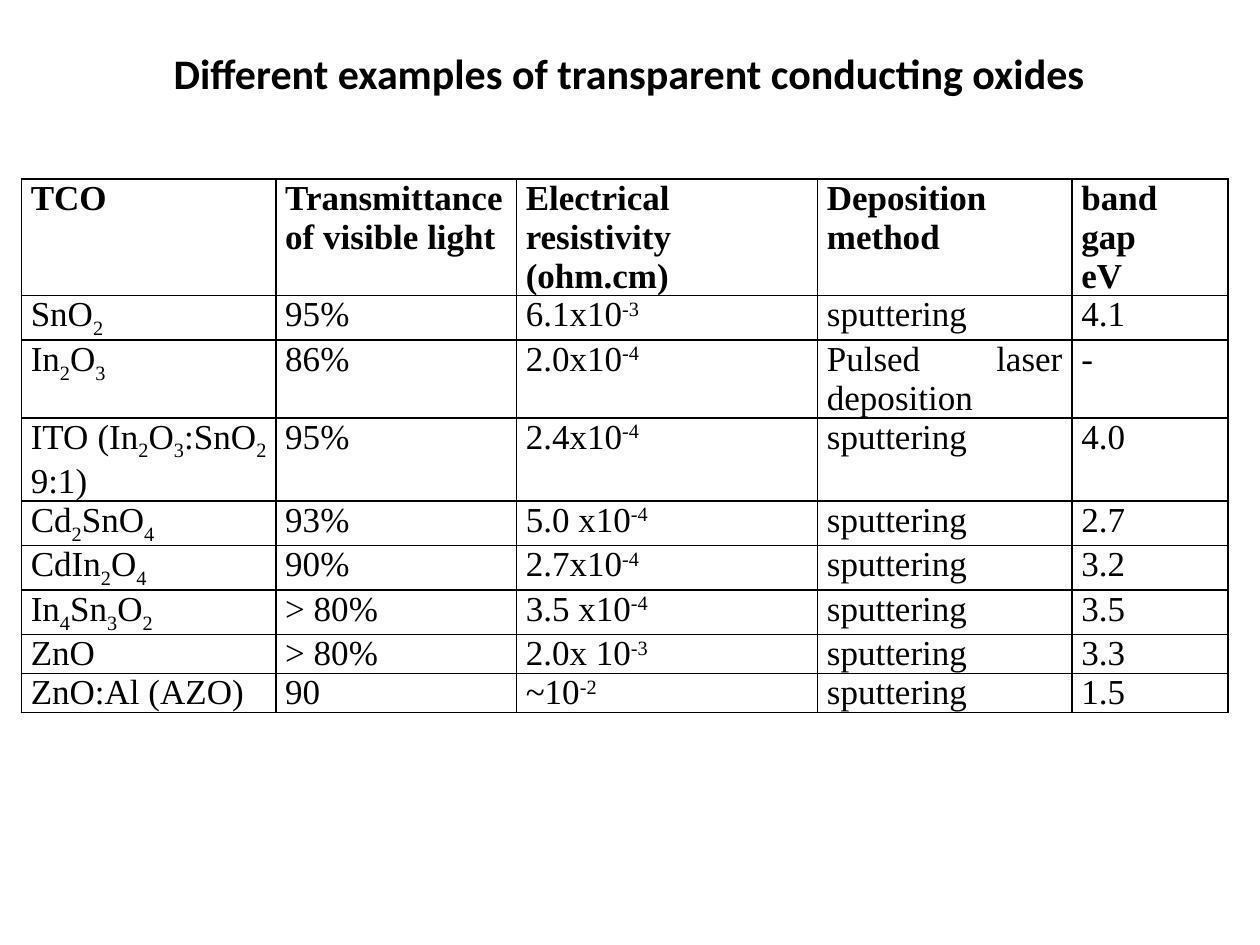
"""Build a slide with a table of transparent conducting oxides."""
from lxml import etree
from pptx import Presentation
from pptx.dml.color import RGBColor
from pptx.enum.text import MSO_AUTO_SIZE, PP_ALIGN
from pptx.oxml.ns import qn
from pptx.util import Cm, Pt

CENTER, JUSTIFY = PP_ALIGN.CENTER, PP_ALIGN.JUSTIFY
FIT_SHAPE = MSO_AUTO_SIZE.SHAPE_TO_FIT_TEXT

TITLE = "Different examples of transparent conducting oxides"
HEADINGS = [
    ["TCO"],
    ["Transmittance", "of visible light"],
    ["Electrical", "resistivity (ohm.cm)"],
    ["Deposition method"],
    ["band gap ", "eV"],
]
# fmt: off
OXIDES = [
    ("SnO|2", "95%", "6.1x10|-3", "sputtering", "4.1"),
    ("In|2|O|3", "86%", "2.0x10|-4", "Pulsed laser deposition", "-"),
    ("ITO (In|2|O|3|:SnO|2 |9:1)", "95%", "2.4x10|-4", "sputtering", "4.0"),
    ("Cd|2|SnO|4", "93%", "5.0 x10|-4", "sputtering", "2.7"),
    ("CdIn|2|O|4", "90%", "2.7x10|-4", "sputtering", "3.2"),
    ("In|4|Sn|3|O|2", "> 80%", "3.5 x10|-4", "sputtering", "3.5"),
    ("ZnO", "> 80%", "2.0x 10|-3", "sputtering", "3.3"),
    ("ZnO:Al (AZO)", "90", "~10|-2", "sputtering", "1.5"),
]
# fmt: on
COLUMN_WIDTHS = [5.13, 4.85, 6.07, 5.13, 3.15]
ROW_HEIGHTS = [1.45, 0.74, 1.22, 1.45] + [0.74] * 5

INK = RGBColor(0, 0, 0)
THEME = {
    "title": {"name": "Calibri", "size": Pt(24), "bold": True},
    "heading": {"name": "Times New Roman", "size": Pt(20), "bold": True},
    "body": {"name": "Times New Roman", "size": Pt(20), "bold": False},
    "border": Pt(1),
}
CELL_MARGINS = {
    "margin_left": Cm(0.19),
    "margin_right": Cm(0.19),
    "margin_top": 0,
    "margin_bottom": 0,
}


def apply_format(target, values):
    """Set each named attribute of the target."""
    for attribute, value in values.items():
        setattr(target, attribute, value)


def write_line(paragraph, text, style, alignment):
    """Write one line in which every second part between bars is a script."""
    paragraph.alignment = alignment
    for position, part in enumerate(text.split("|")):
        run = paragraph.add_run()
        run.text = part
        apply_format(run.font, THEME[style])
        run.font.color.rgb = INK
        if position % 2:
            baseline = "30000" if part.startswith("-") else "-25000"
            run.font._element.set("baseline", baseline)


def draw_borders(cell):
    """Rule all four sides of a cell and leave it unfilled."""
    properties = cell._tc.get_or_add_tcPr()
    for side in ("a:lnL", "a:lnR", "a:lnT", "a:lnB"):
        rule = etree.SubElement(properties, qn(side), w=str(THEME["border"]))
        ink = etree.SubElement(rule, qn("a:solidFill"))
        etree.SubElement(ink, qn("a:srgbClr"), val=str(INK))
    cell.fill.background()


def fill_cell(cell, lines, style):
    """Write the lines of a cell, one paragraph each."""
    apply_format(cell, CELL_MARGINS)
    frame = cell.text_frame
    for position, line in enumerate(lines):
        paragraph = frame.add_paragraph() if position else frame.paragraphs[0]
        write_line(paragraph, line, style, JUSTIFY)
    draw_borders(cell)


def add_oxide_table(slide):
    """Place the table of oxides."""
    rows = [HEADINGS] + [[[value] for value in oxide] for oxide in OXIDES]
    table = slide.shapes.add_table(
        len(rows), len(HEADINGS), Cm(0.43), Cm(3.61),
        Cm(sum(COLUMN_WIDTHS)), Cm(sum(ROW_HEIGHTS)),
    ).table
    apply_format(table, {"first_row": False, "horz_banding": False})
    for column, width in zip(table.columns, COLUMN_WIDTHS):
        column.width = Cm(width)
    for index, (row, height) in enumerate(zip(table.rows, ROW_HEIGHTS)):
        row.height = Cm(height)
        for cell, lines in zip(row.cells, rows[index]):
            fill_cell(cell, lines, "body" if index else "heading")


def add_title(slide):
    """Place the centred title."""
    frame = slide.shapes.add_textbox(Cm(2.74), Cm(0.84), Cm(19.89), Cm(1.27)).text_frame
    apply_format(frame, {"word_wrap": True, "auto_size": FIT_SHAPE})
    write_line(frame.paragraphs[0], TITLE, "title", CENTER)


def main():
    """Build and save the presentation."""
    deck = Presentation()
    apply_format(deck, {"slide_width": Cm(25.4), "slide_height": Cm(19.05)})
    slide = deck.slides.add_slide(deck.slide_layouts[6])
    add_oxide_table(slide)
    add_title(slide)
    deck.save("out.pptx")


if __name__ == "__main__":
    main()
